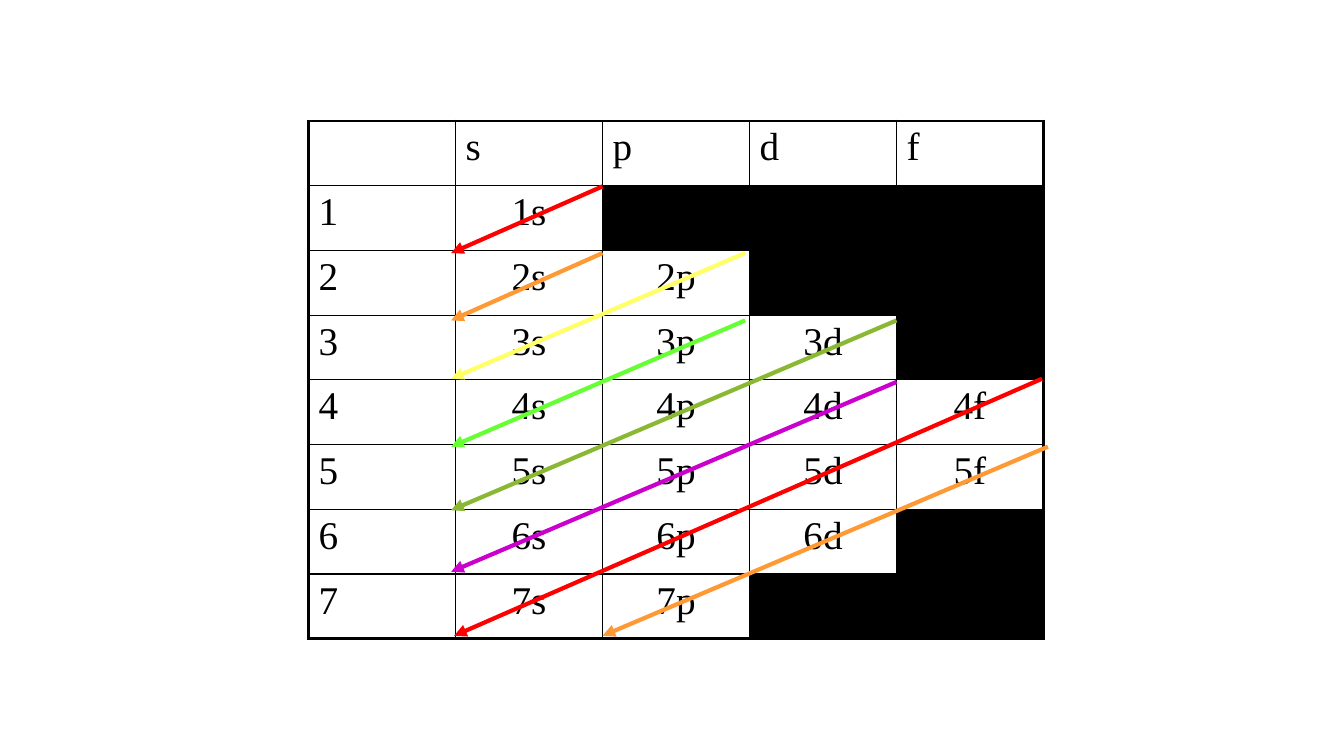
from lxml.etree import SubElement as Sub
from pptx import Presentation
from pptx.dml.color import RGBColor as RGB
from pptx.enum.shapes import MSO_CONNECTOR as Link
from pptx.enum.text import PP_ALIGN as Align
from pptx.oxml.ns import qn
from pptx.util import Inches, Pt

COLORS = {
    "black": "000000", "red": "FF0000", "orange": "FF9933", "yellow": "FFFF66",
    "green": "66FF33", "olive": "8AB833", "purple": "CC00CC",
}
LEFT, TOP, COL, ROW = 3.06, 1.2, 1.458, 0.6425
SHELLS = ["s", "sp", "spd", "spdf", "spdf", "spd", "sp"]


def write(cell, text, size=28, font="Times New Roman", color="black", align=Align.LEFT):
    para = cell.text_frame.paragraphs[0]
    para.alignment = align
    run = para.add_run()
    run.text = text
    run.font.size = Pt(size)
    run.font.name = font
    run.font.color.rgb = RGB.from_string(COLORS[color])


def edge(cell, side, width):
    line = Sub(cell._tc.get_or_add_tcPr(), qn("a:ln" + side), w=str(Pt(width)))
    fill = Sub(line, qn("a:solidFill"))
    Sub(fill, qn("a:srgbClr"), val=COLORS["black"])


deck = Presentation()
deck.slide_width, deck.slide_height = Inches(13.33), Inches(7.5)
slide = deck.slides.add_slide(deck.slide_layouts[6])

# Orbital table
rows, cols = len(SHELLS) + 1, 5
frame = slide.shapes.add_table(
    rows, cols, Inches(LEFT), Inches(TOP), Inches(COL * cols), Inches(ROW * rows))
table = frame.table
table.first_row = table.horz_banding = False

for r in range(rows):
    for c in range(cols):
        cell = table.cell(r, c)
        outer = {"L": c == 0, "R": c == cols - 1, "T": r == 0, "B": r == rows - 1}
        for side, thick in outer.items():
            edge(cell, side, 2.25 if thick else 1)
        cell.fill.background()
        if r == 0:
            if c > 0:
                write(cell, "spdf"[c - 1])
        elif c == 0:
            write(cell, str(r))
        elif c <= len(SHELLS[r - 1]):
            write(cell, f"{r}{SHELLS[r - 1][c - 1]}", align=Align.CENTER)
        else:
            cell.fill.solid()
            cell.fill.fore_color.rgb = RGB.from_string(COLORS["black"])

# Filling-order arrows: colour, start and end in columns and rows of the table
ARROWS = [
    ("red", 2, 1.01, 0.97, 2.04),
    ("orange", 2, 2.04, 0.97, 3.08),
    ("yellow", 2.97, 2.04, 0.97, 3.98),
    ("green", 2.97, 3.08, 0.97, 5.03),
    ("olive", 4, 3.08, 0.97, 6.01),
    ("purple", 4, 4.03, 0.97, 6.96),
    ("red", 4.99, 3.98, 0.99, 7.95),
    ("orange", 5.03, 5.03, 2, 7.95),
]
for color, x1, y1, x2, y2 in ARROWS:
    arrow = slide.shapes.add_connector(
        Link.STRAIGHT,
        Inches(LEFT + x1 * COL), Inches(TOP + y1 * ROW),
        Inches(LEFT + x2 * COL), Inches(TOP + y2 * ROW))
    arrow.line.width = Pt(3)
    arrow.line.color.rgb = RGB.from_string(COLORS[color])
    Sub(arrow.line._get_or_add_ln(), qn("a:tailEnd"), type="triangle")
    Sub(arrow._element.spPr, qn("a:effectLst"))

deck.save("out.pptx")
